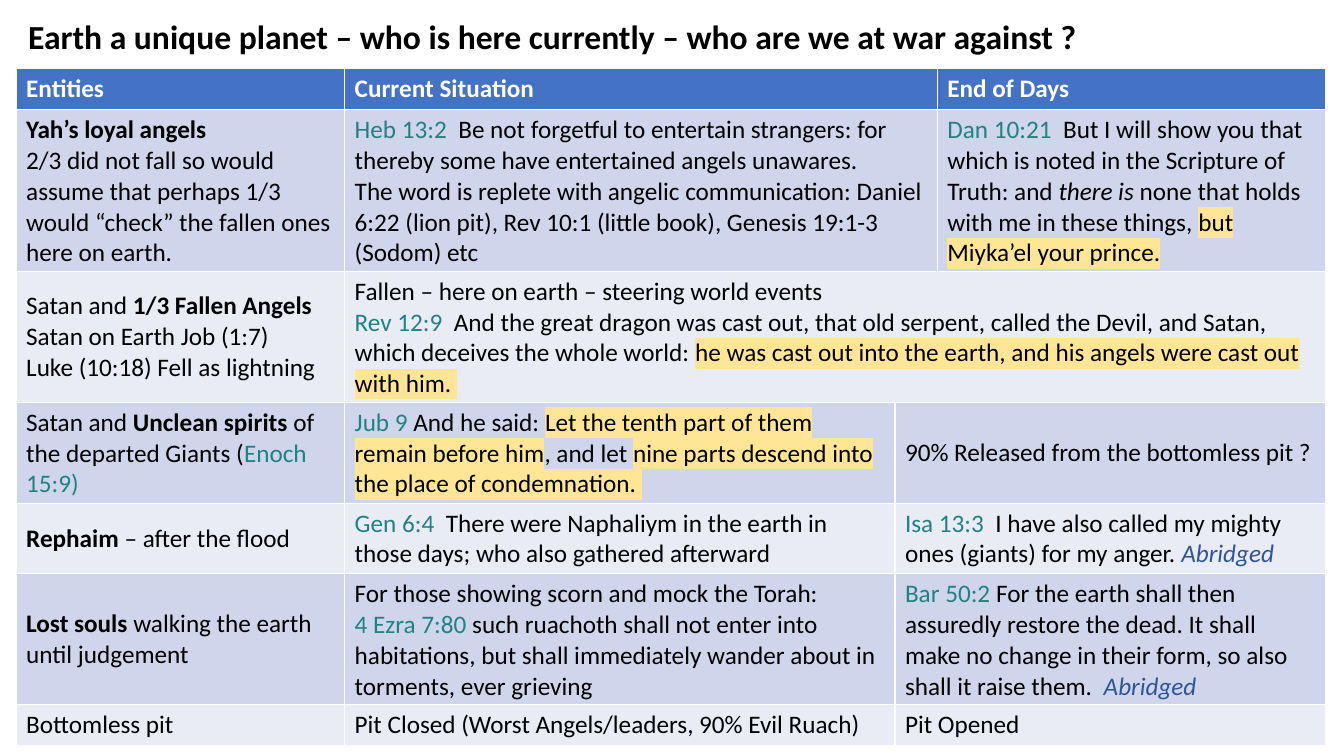
"""Build the slide about who is on Earth, now and at the end of days."""
from dataclasses import dataclass

from lxml import etree
from pptx import Presentation
from pptx.dml.color import RGBColor
from pptx.enum.text import MSO_ANCHOR
from pptx.oxml.ns import qn
from pptx.table import Table, _Cell
from pptx.text.text import TextFrame, _Paragraph
from pptx.util import Pt

TOP, MIDDLE = MSO_ANCHOR.TOP, MSO_ANCHOR.MIDDLE
BLANK_LAYOUT = 6


@dataclass(frozen=True)
class Theme:
    """Colours, font and type sizes of the slide."""
    font: str = "Calibri"
    title_size: float = 24
    table_size: float = 18
    text: str = "000000"
    header_text: str = "FFFFFF"
    verse: str = "218282"
    note: str = "2F5597"
    highlight: str = "FFE697"
    header_fill: str = "4472C4"
    bands: tuple[str, str] = ("CFD5EA", "E9EBF5")


THEME = Theme()


@dataclass(frozen=True)
class Span:
    """A stretch of text in one style."""
    text: str
    color: str = THEME.text
    bold: bool = False
    italic: bool = False
    marked: bool = False


Para = list[Span]


@dataclass(frozen=True)
class Entry:
    """The content of one table cell and the columns it covers."""
    paras: list[Para]
    columns: int = 1


@dataclass(frozen=True)
class Row:
    """A table row with its height in points."""
    height: float
    entries: list[Entry]


def plain(text: str) -> Span:
    """Return ordinary body text."""
    return Span(text)


def bold(text: str) -> Span:
    """Return bold body text."""
    return Span(text, bold=True)


def verse(text: str) -> Span:
    """Return a scripture reference."""
    return Span(text, color=THEME.verse)


def marked(text: str) -> Span:
    """Return highlighted text."""
    return Span(text, marked=True)


def header(text: str, columns: int = 1) -> Entry:
    """Return a heading cell."""
    return Entry([[Span(text, color=THEME.header_text, bold=True)]], columns)


ABRIDGED = Span("Abridged", color=THEME.note, italic=True)
TITLE = bold("Earth a unique planet – who is here currently – who are we at war against ?")
COLUMN_WIDTHS = (234.7, 393.1, 30.3, 277.2)
ROWS = [
    Row(29.5, [header("Entities"), header("Current Situation", 2), header("End of Days")]),
    Row(115, [
        Entry([[bold("Yah’s loyal angels")],
               [plain("2/3 did not fall so would assume that perhaps 1/3 would “check” "
                      "the fallen ones here on earth.")]]),
        Entry([[verse("Heb 13:2  "),
                plain("Be not forgetful to entertain strangers: for thereby some have "
                      "entertained angels unawares. ")],
               [plain("The word is replete with angelic communication: Daniel 6:22 (lion pit), "
                      "Rev 10:1 (little book), Genesis 19:1-3 (Sodom) etc")]], 2),
        Entry([[verse("Dan 10:21  "),
                plain("But I will show you that which is noted in the Scripture of Truth: and "),
                Span("there is", italic=True),
                plain(" none that holds with me in these things, "),
                marked("but Miyka’el your prince.")]]),
    ]),
    Row(93.5, [
        Entry([[plain("Satan and "), bold("1/3 Fallen Angels")],
               [plain("Satan on Earth Job (1:7)")],
               [plain("Luke (10:18) Fell as lightning")]]),
        Entry([[plain("Fallen – here on earth – steering world events")],
               [verse("Rev 12:9  "),
                plain("And the great dragon was cast out, that old serpent, called the Devil, "
                      "and Satan, which deceives the whole world: "),
                marked("he was cast out into the earth, and his angels were cast out "
                       "with him. ")]], 3),
    ]),
    Row(72, [
        Entry([[plain("Satan and "), bold("Unclean spirits "),
                plain("of the departed Giants ("), verse("Enoch 15:9)")]]),
        Entry([[verse("Jub 9 "), plain("And he said: "),
                marked("Let the tenth part of them remain before him"), plain(", and let "),
                marked("nine parts descend into the place of condemnation. ")]]),
        Entry([[plain("90% Released from the bottomless pit ?")]], 2),
    ]),
    Row(50.5, [
        Entry([[bold("Rephaim"), plain(" – after the flood")]]),
        Entry([[verse("Gen 6:4  "),
                plain("There were Naphaliym in the earth in those days; who also "
                      "gathered afterward")]]),
        Entry([[verse("Isa 13:3  "),
                plain("I have also called my mighty ones (giants) for my anger. "),
                ABRIDGED]], 2),
    ]),
    Row(93.5, [
        Entry([[bold("Lost souls "), plain("walking the earth until judgement")]]),
        Entry([[plain("For those showing scorn and mock the Torah:")],
               [verse("4 Ezra 7:80 "),
                plain("such ruachoth shall not enter into habitations, but shall immediately "
                      "wander about in torments, ever grieving")]]),
        Entry([[verse("Bar 50:2 "),
                plain("For the earth shall then assuredly restore the dead. It shall make no "
                      "change in their form, so also shall it raise them.  "),
                ABRIDGED]], 2),
    ]),
    Row(29, [
        Entry([[plain("Bottomless pit")]]),
        Entry([[plain("Pit Closed (Worst Angels/leaders, 90% Evil Ruach)")]]),
        Entry([[plain("Pit Opened")]], 2),
    ]),
]


def add_span(para: _Paragraph, span: Span, size: float) -> None:
    """Append one styled run to a paragraph."""
    run = para.add_run()
    run.text = span.text
    font = run.font
    font.name, font.size = THEME.font, Pt(size)
    font.bold, font.italic = span.bold, span.italic
    font.color.rgb = RGBColor.from_string(span.color)
    if span.marked:
        highlight = etree.Element(qn("a:highlight"))
        etree.SubElement(highlight, qn("a:srgbClr"), val=THEME.highlight)
        run._r.rPr.find(qn("a:solidFill")).addnext(highlight)


def write(frame: TextFrame, paras: list[Para], size: float) -> None:
    """Fill a text frame with paragraphs of spans."""
    for index, spans in enumerate(paras):
        para = frame.add_paragraph() if index else frame.paragraphs[0]
        for span in spans:
            add_span(para, span, size)


def fill_cell(cell: _Cell, entry: Entry, color: str, anchor: MSO_ANCHOR) -> None:
    """Set the fill, anchor and text of a cell."""
    cell.fill.solid()
    cell.fill.fore_color.rgb = RGBColor.from_string(color)
    cell.vertical_anchor = anchor
    write(cell.text_frame, entry.paras, THEME.table_size)


def fill_table(table: Table) -> None:
    """Size the grid, merge spanning cells and write every entry."""
    for column, width in zip(table.columns, COLUMN_WIDTHS):
        column.width = Pt(width)
    for index, row in enumerate(ROWS):
        table.rows[index].height = Pt(row.height)
        color = THEME.bands[(index - 1) % 2] if index else THEME.header_fill
        start = 0
        for entry in row.entries:
            cell = table.cell(index, start)
            if entry.columns > 1:
                cell.merge(table.cell(index, start + entry.columns - 1))
            fill_cell(cell, entry, color, MIDDLE if index else TOP)
            start += entry.columns


def main() -> None:
    """Create the deck and save it."""
    deck = Presentation()
    deck.slide_width, deck.slide_height = Pt(960), Pt(540)
    page = deck.slides.add_slide(deck.slide_layouts[BLANK_LAYOUT])
    box = page.shapes.add_textbox(Pt(13), Pt(8), Pt(973.5), Pt(36))
    box.text_frame.word_wrap = True
    write(box.text_frame, [[TITLE]], THEME.title_size)
    grid = page.shapes.add_table(len(ROWS), len(COLUMN_WIDTHS), Pt(11.5), Pt(49),
                                 Pt(sum(COLUMN_WIDTHS)), Pt(sum(row.height for row in ROWS)))
    fill_table(grid.table)
    deck.save("out.pptx")


if __name__ == "__main__":
    main()
